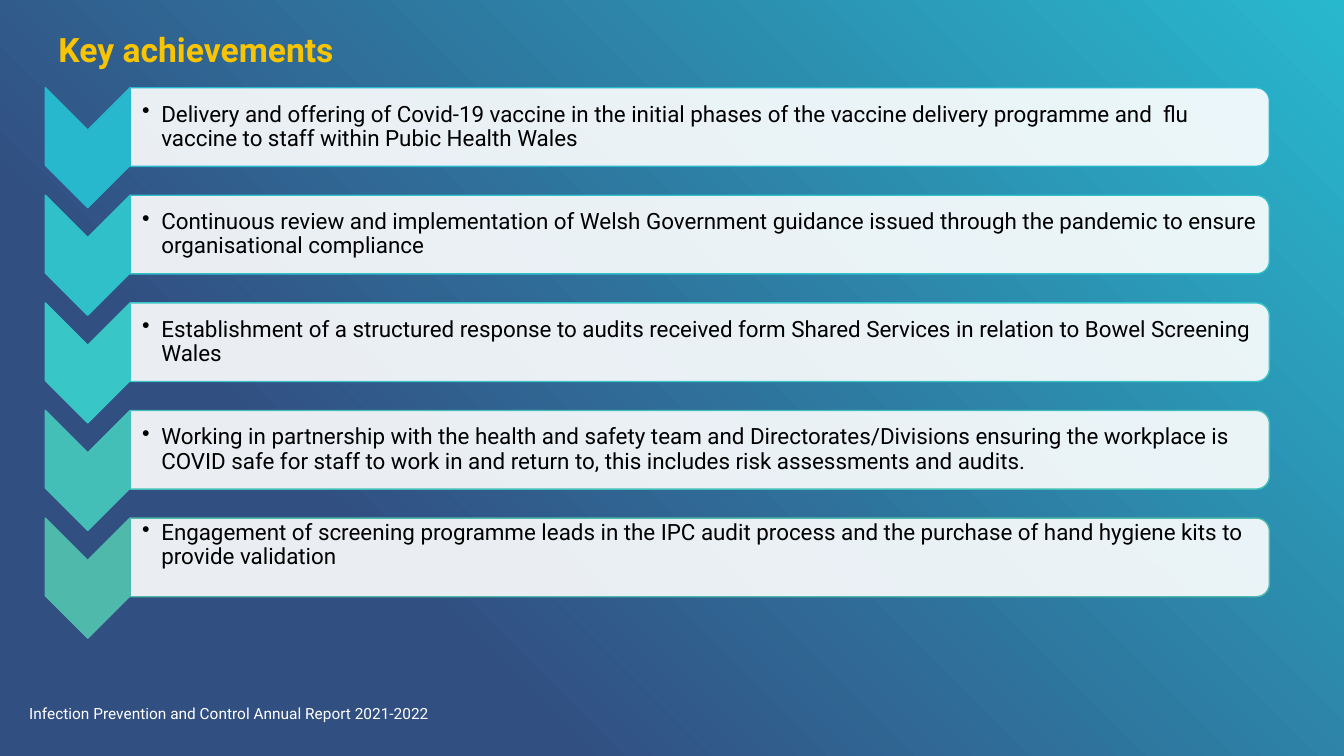
import pptx
import pptx.util
import pptx.oxml
import pptx.oxml.ns
import pptx.dml.color
import pptx.enum.shapes
import pptx.enum.text
from lxml import etree

Inches = pptx.util.Inches
Pt = pptx.util.Pt
RGBColor = pptx.dml.color.RGBColor
MSO_SHAPE = pptx.enum.shapes.MSO_SHAPE
MSO_ANCHOR = pptx.enum.text.MSO_ANCHOR
PP_ALIGN = pptx.enum.text.PP_ALIGN
qn = pptx.oxml.ns.qn

# Content
TITLE = "Key achievements"
FOOTER = "Infection Prevention and Control Annual Report 2021-2022"
NAVY = RGBColor(0x32, 0x4F, 0x82)
CYAN = RGBColor(0x28, 0xB8, 0xCE)
GOLD = RGBColor(0xF9, 0xC4, 0x02)
WHITE = RGBColor(0xFF, 0xFF, 0xFF)
BLACK = RGBColor(0x00, 0x00, 0x00)
FONT = "Roboto"

# Text, accent colour, upward shift of the text in inches
ACHIEVEMENTS = [
    ("Delivery and offering of Covid-19 vaccine in the initial phases of the vaccine "
     "delivery programme and  flu vaccine to staff within Pubic Health Wales", CYAN, 0),
    ("Continuous review and implementation of Welsh Government guidance issued through "
     "the pandemic to ensure organisational compliance", RGBColor(0x30, 0xC0, 0xCA), 0),
    ("Establishment of a structured response to audits received form Shared Services in "
     "relation to Bowel Screening Wales", RGBColor(0x39, 0xC6, 0xC6), 0),
    ("Working in partnership with the health and safety team and Directorates/Divisions "
     "ensuring the workplace is COVID safe for staff to work in and return to, this "
     "includes risk assessments and audits.", RGBColor(0x44, 0xBF, 0xB7), 0),
    ("Engagement of screening programme leads in the IPC audit process and the purchase "
     "of hand hygiene kits to provide validation", RGBColor(0x4F, 0xB9, 0xAB), 0.12),
]

# Layout in inches
FIRST_TOP = 0.87
PITCH = 4.27 / 4
CHEVRON_LEFT, CHEVRON_WIDTH, CHEVRON_HEIGHT = 0.45, 0.84, 1.19
BAR_LEFT, BAR_WIDTH, BAR_HEIGHT = 1.29, 11.3, 0.78
TEXT_WIDTH, TEXT_HEIGHT = 11.26, 0.7


def add_turned_shape(slide, kind, left, top, width, height, fill, line):
    """Add a shape turned by 90 degrees that covers the given area."""
    shape = slide.shapes.add_shape(
        kind, Inches(left + (width - height) / 2), Inches(top + (height - width) / 2),
        Inches(height), Inches(width))
    shape.rotation = 90
    shape.shadow.inherit = False
    shape.fill.solid()
    shape.fill.fore_color.rgb = fill
    shape.line.color.rgb = line
    shape.line.width = Pt(1)
    return shape


def set_text(shape, text, size, color, insets=(0, 0, 0, 0), anchor=MSO_ANCHOR.MIDDLE,
             bold=False, bullet=False):
    frame = shape.text_frame
    frame.word_wrap = True
    frame.vertical_anchor = anchor
    (frame.margin_left, frame.margin_top,
     frame.margin_right, frame.margin_bottom) = map(Inches, insets)
    frame.text = text
    paragraph = frame.paragraphs[0]
    paragraph.alignment = PP_ALIGN.LEFT
    paragraph.line_spacing = 0.9
    if bullet:
        properties = paragraph._p.get_or_add_pPr()
        properties.set("marL", str(Inches(0.19)))
        properties.set("indent", str(-Inches(0.19)))
        etree.SubElement(properties, qn("a:buChar")).set("char", "•")
    font = paragraph.runs[0].font
    font.name, font.size, font.bold = FONT, Pt(size), bold
    font.color.rgb = color


def main():
    presentation = pptx.Presentation()
    presentation.slide_width = Inches(13.33)
    presentation.slide_height = Inches(7.5)
    slide = presentation.slides.add_slide(presentation.slide_layouts[5])

    # Background, from lower left to upper right
    background = slide.background.fill
    background.gradient()
    background.gradient_angle = 45
    for stop, (position, color) in zip(background.gradient_stops, [(0.27, NAVY), (1, CYAN)]):
        stop.position = position
        stop.color.rgb = color

    # Title
    title = slide.shapes.title
    title.left, title.top = Inches(0.58), Inches(0.16)
    title.width, title.height = Inches(11.48), Inches(0.71)
    set_text(title, TITLE, 24, GOLD, bold=True)

    # Achievement rows: chevron, bar and text
    for index, (text, accent, shift) in enumerate(ACHIEVEMENTS):
        top = FIRST_TOP + index * PITCH
        add_turned_shape(slide, MSO_SHAPE.CHEVRON, CHEVRON_LEFT, top,
                         CHEVRON_WIDTH, CHEVRON_HEIGHT, accent, accent)
        bar = add_turned_shape(slide, MSO_SHAPE.ROUND_2_SAME_RECTANGLE, BAR_LEFT, top,
                               BAR_WIDTH, BAR_HEIGHT, WHITE, accent)
        fill_color = bar._element.spPr.find(qn("a:solidFill"))[0]
        etree.SubElement(fill_color, qn("a:alpha")).set("val", "90000")
        text_top = top + (BAR_HEIGHT - TEXT_HEIGHT) / 2 - shift
        box = slide.shapes.add_textbox(Inches(BAR_LEFT), Inches(text_top),
                                       Inches(TEXT_WIDTH), Inches(TEXT_HEIGHT))
        set_text(box, text, 16, BLACK, insets=(0.12, 0.01, 0.01, 0.01), bullet=True)

    # Footer
    footer = slide.shapes.add_textbox(Inches(0.29), Inches(7.01), Inches(4.47), Inches(0.33))
    set_text(footer, FOOTER, 11, WHITE, anchor=MSO_ANCHOR.TOP)

    presentation.save("out.pptx")


if __name__ == "__main__":
    main()
